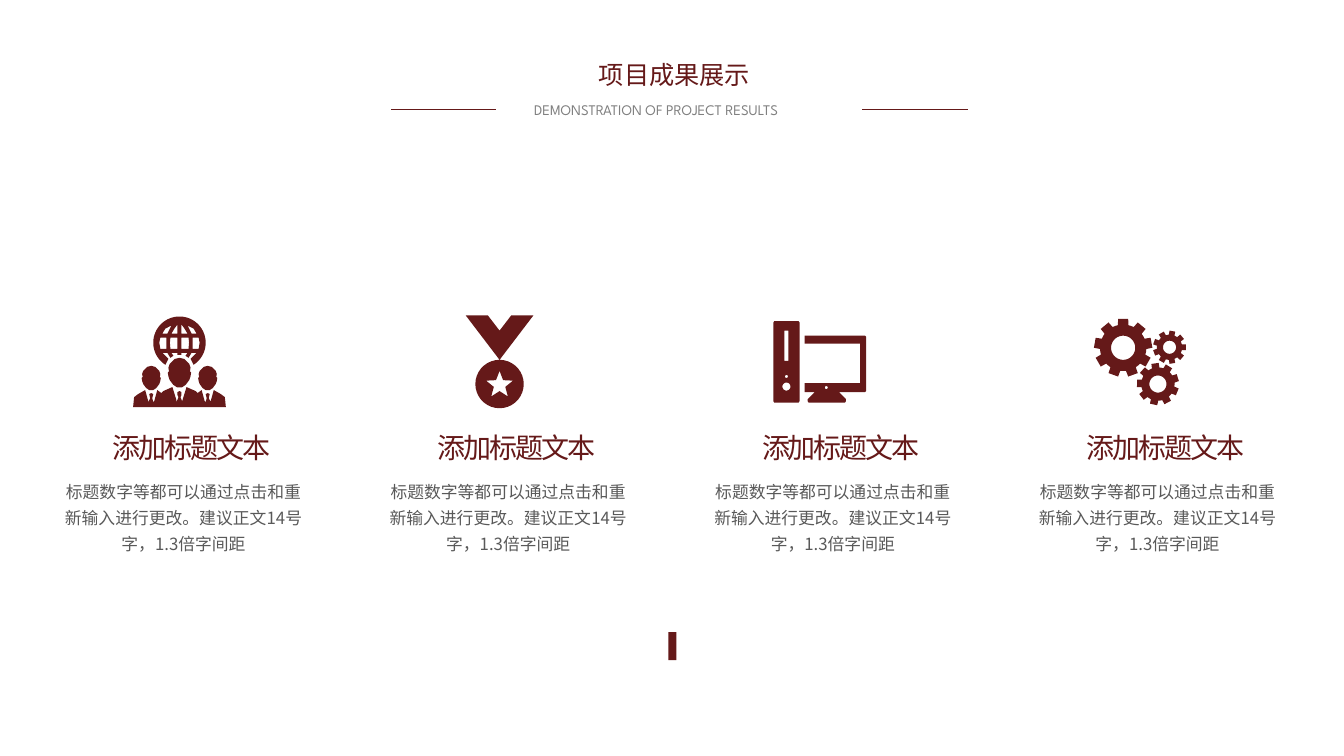
from math import cos, radians, sin

from lxml.etree import SubElement
from pptx import Presentation
from pptx.dml.color import RGBColor
from pptx.enum.shapes import MSO_CONNECTOR, MSO_SHAPE
from pptx.enum.text import MSO_ANCHOR, MSO_AUTO_SIZE, PP_ALIGN
from pptx.oxml.ns import qn
from pptx.util import Pt

PX = 9144  # 100 px to the inch
MAROON, GREY, BODY = "651919", "808080", "595959"
CJK, LATIN = "Noto Sans CJK SC", "League Spartan"
rgb = RGBColor.from_string

prs = Presentation()
prs.slide_width, prs.slide_height = 1333 * PX, 750 * PX
s = prs.slides.add_slide(prs.slide_layouts[5])


def ring(cx, cy, profile, repeat=36, start=0):
    """Closed outline: (angle, radius) pairs repeated clockwise from the top."""
    points = []
    for i in range(repeat):
        for angle, radius in profile:
            a = radians(start + i * 360 / repeat + angle)
            points.append((cx + radius * sin(a), cy - radius * cos(a)))
    return points


def icon(outlines):
    """One filled freeform; inner outlines become holes."""
    outlines = [[(round(x * PX), round(y * PX)) for x, y in o] for o in outlines]
    fb = s.shapes.build_freeform(*outlines[0][0], scale=1)
    for i, outline in enumerate(outlines):
        if i:
            fb.move_to(*outline[0])
        fb.add_line_segments(outline[1:], close=True)
    sp = fb.convert_to_shape()
    sp.shadow.inherit = False
    sp.fill.solid()
    sp.fill.fore_color.rgb = rgb(MAROON)
    sp.line.fill.background()


# Heading and the four columns: box, text, size, font, colour, align, line spacing, tracking
LEFT, CENTER = PP_ALIGN.LEFT, PP_ALIGN.CENTER
texts = [
    ((584, 54, 222, 40), "项目成果展示", 18, CJK, MAROON, LEFT, 1, 0),
    ((520, 95, 293, 28), "DEMONSTRATION OF PROJECT RESULTS", 10.5, LATIN, GREY, LEFT, 1, 0),
]
for column in range(4):
    x = 48 + column * 322
    texts += [
        ((x, 467, 268, 86), "标题数字等都可以通过点击和重新输入进行更改。建议正文14号字，1.3倍字间距",
         12, CJK, BODY, CENTER, 1.3, 0),
        ((x + 54, 416, 227, 47), "添加标题文本", 20, CJK, MAROON, LEFT, 1.2, -150),
    ]
for i, (box, text, size, font, color, align, spacing, tracking) in enumerate(texts):
    x, y, w, h = (v * PX for v in box)
    if i == 0:
        sp = s.shapes.title
        sp.left, sp.top, sp.width, sp.height = x, y, w, h
    else:
        sp = s.shapes.add_textbox(x, y, w, h)
    tf = sp.text_frame
    tf.word_wrap = font != LATIN
    tf.auto_size = MSO_AUTO_SIZE.SHAPE_TO_FIT_TEXT
    tf.vertical_anchor = MSO_ANCHOR.TOP
    p = tf.paragraphs[0]
    p.alignment, p.line_spacing = align, spacing
    r = p.add_run()
    r.text = text
    r.font.size, r.font.name = Pt(size), font
    r.font.color.rgb = rgb(color)
    rPr = r.font._element
    SubElement(rPr, qn("a:ea"), typeface=font)
    if tracking:
        rPr.set("spc", str(tracking))

# Rules beside the subtitle
for x1, x2 in ((388, 492), (855, 960)):
    line = s.shapes.add_connector(MSO_CONNECTOR.STRAIGHT, x1 * PX, 109 * PX, x2 * PX, 109 * PX)
    line.line.color.rgb = rgb(MAROON)
    line.line.width = Pt(0.5)
    SubElement(line._element.spPr, qn("a:effectLst"))

# Team icon: right halves mirrored about x = 178
AXIS = 356
suits = [(178, 388), (180, 389), (180, 392), (179, 394), (181, 399), (181, 397), (185, 384),
         (194, 388), (196, 390), (200, 387), (203, 398), (204, 399), (205, 395), (204, 391),
         (206, 390), (208, 391), (207, 395), (209, 399), (209, 398), (212, 387), (219, 391),
         (223, 394), (224, 404)]
globe_edge = [(180, 352), (180, 350), (186, 350), (184, 353), (187, 355), (190, 350),
              (195, 350), (189, 356), (192, 362)]
windows = [
    [(191, 335), (191, 346), (197, 346), (198, 340), (197, 335)],
    [(180, 335), (180, 346), (187, 346), (187.5, 340), (187, 335)],
    [(186, 323), (190, 331), (195, 331), (192, 326)],
    [(180, 322), (180, 331), (186, 331), (183, 326)],
]
head = [(0, 0), (4, 1), (6, 3), (8, 5), (9, 8), (8.5, 11), (9.5, 12), (9, 15), (8, 18), (5, 22), (2, 24)]
head += [(-x, y) for x, y in reversed(head[1:])]
globe = ring(178, 340, [(0, 26)], 72, 212.5)[:60]
team = [
    suits + [(AXIS - x, y) for x, y in reversed(suits)],
    globe + globe_edge[::-1] + [(AXIS - x, y) for x, y in globe_edge],
]
for window in windows:
    team += [window, [(AXIS - x, y) for x, y in window]]
for cx, top, scale in ((150, 363, 1), (178, 355, 1.22), (206, 363, 1)):
    team.append([(cx + x * scale, top + y * scale) for x, y in head])
icon(team)

# Medal icon
icon([
    [(462, 313), (484, 313), (495.5, 328), (507, 313), (529, 313), (495.5, 357)],
    ring(495.5, 381, [(0, 24)]),
    ring(495.5, 382, [(0, 14), (36, 6)], 5),
])

# Computer icon
icon([
    [(768, 318.5), (792, 318.5), (793, 320), (793, 398), (792, 399.5), (768, 399.5), (767, 398), (767, 320)],
    [(778, 328), (782, 328), (782, 358), (778, 358)],
    ring(780, 373.5, [(0, 1.5)]),
    ring(780, 383.5, [(0, 4)]),
    [(798, 333), (858, 333), (859, 334), (859, 388), (858, 389), (832, 389), (839, 396),
     (839, 398), (838, 399.5), (802, 399.5), (801, 398), (801, 396), (808, 389), (798, 389),
     (798, 380), (853, 380), (853, 341), (798, 341)],
    ring(819.5, 384.5, [(0, 1.5)]),
])

# Gears icon: centre, tip radius, root radius, hole radius, turn
gears = []
for cx, cy, tip, root, hole, turn in (
    (1114, 345, 29, 23, 12, 0),
    (1148.5, 381, 21, 16.5, 8.5, -8),
    (1160, 344.5, 16.5, 12.5, 6.5, 10),
):
    tooth = [(-10, tip), (10, tip), (13, root), (20, root), (27, root)]
    gears += [ring(cx, cy, tooth, 9, turn), ring(cx, cy, [(0, hole)])]
icon(gears)

# Bottom marker
sp = s.shapes.add_shape(MSO_SHAPE.RECTANGLE, 663 * PX, 627 * PX, 8 * PX, 28 * PX)
sp.shadow.inherit = False
sp.fill.solid()
sp.fill.fore_color.rgb = rgb(MAROON)
sp.line.fill.background()

prs.save("out.pptx")
